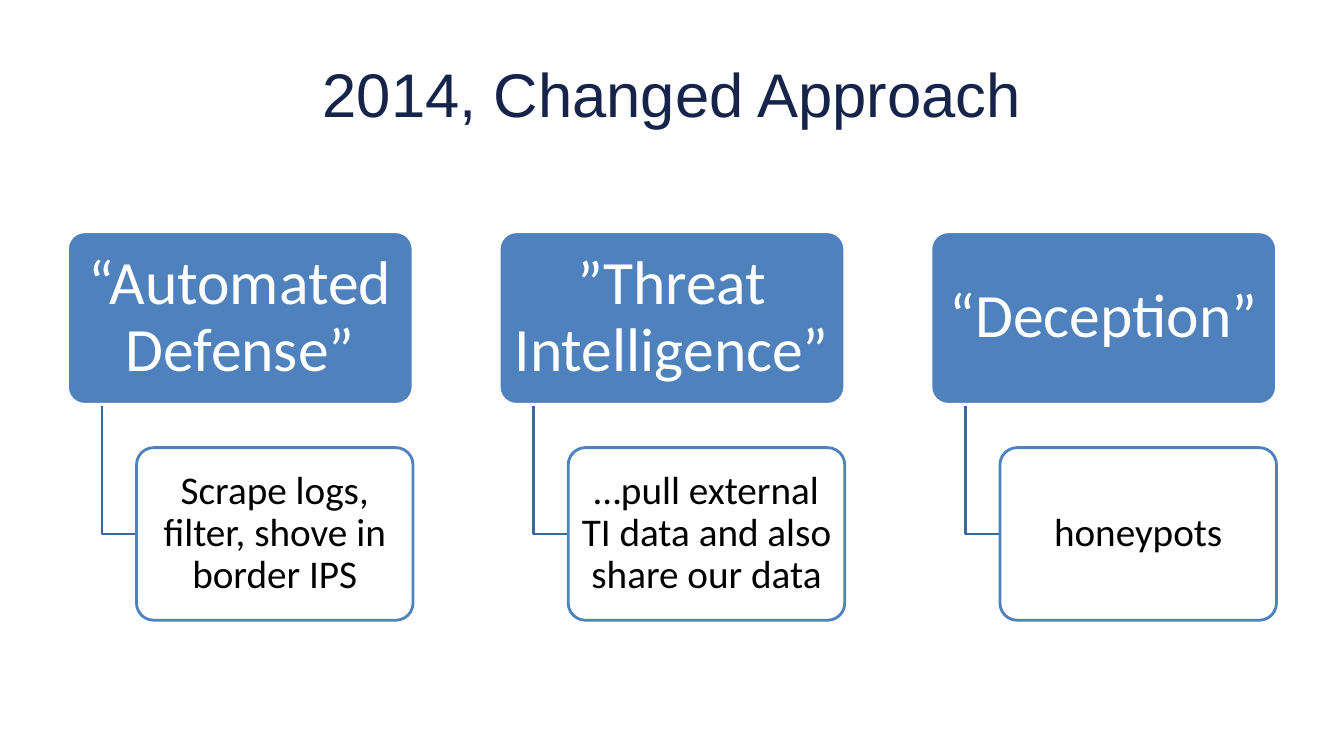
"""Build the slide on the three parts of the approach changed in 2014."""
import pptx
import pptx.dml.color
import pptx.enum.shapes
import pptx.enum.text
import pptx.oxml.ns
import pptx.util
from lxml import etree
from pptx.util import Cm, Pt

COLORS = {
    "title": "16234A",
    "header": "4F81BD",
    "elbow": "3F6797",
    "white": "FFFFFF",
    "black": "000000",
}
APPROACHES = [
    ("“Automated Defense”", "Scrape logs, filter, shove in border IPS"),
    ("”Threat Intelligence”", "…pull external TI data and also share our data"),
    ("“Deception”", "honeypots"),
]
MARGIN, COLUMN_PITCH = 1.7, 10.88
HEADER_TOP, HEADER_WIDTH, BOX_HEIGHT = 5.84, 8.71, 4.35
ELBOW_INDENT, DETAIL_INDENT, ROW_GAP = 0.87, 1.74, 1.09
HEADER_BOTTOM = HEADER_TOP + BOX_HEIGHT
DETAIL_TOP = HEADER_BOTTOM + ROW_GAP
LEVELS = [
    {"indent": 0, "top": HEADER_TOP, "fill": "header", "line": "white", "text": "white",
     "size": 44, "inset": (0.22, 0.15)},
    {"indent": DETAIL_INDENT, "top": DETAIL_TOP, "fill": "white", "line": "header", "text": "black",
     "size": 28, "inset": (0.15, 0.1)},
]


def rgb(role):
    return pptx.dml.color.RGBColor.from_string(COLORS[role])


def write(frame, text, font_format, color):
    frame.vertical_anchor = pptx.enum.text.MSO_ANCHOR.MIDDLE
    paragraph = frame.paragraphs[0]
    paragraph.alignment = pptx.enum.text.PP_ALIGN.CENTER
    run = paragraph.add_run()
    run.text = text
    for attribute, value in font_format.items():
        setattr(run.font, attribute, value)
    run.font.color.rgb = rgb(color)
    return paragraph


deck = pptx.Presentation()
deck.slide_width, deck.slide_height = Cm(33.87), Cm(19.05)
slide = deck.slides.add_slide(deck.slide_layouts[5])

title = slide.shapes.title
title_place = {"left": Cm(MARGIN), "top": Cm(0.76), "width": Cm(30.48), "height": Cm(3.18)}
for attribute, value in title_place.items():
    setattr(title, attribute, value)
write(title.text_frame, "2014, Changed Approach", {"name": "Arial", "size": Pt(44)}, "title")

for column, approach in enumerate(APPROACHES):
    left = MARGIN + column * COLUMN_PITCH

    elbow_left = left + ELBOW_INDENT
    detail_left = left + DETAIL_INDENT
    detail_middle = DETAIL_TOP + BOX_HEIGHT / 2
    outline = slide.shapes.build_freeform(Cm(elbow_left), Cm(HEADER_BOTTOM))
    outline.add_line_segments(
        [(Cm(elbow_left), Cm(detail_middle)), (Cm(detail_left), Cm(detail_middle))], close=False)
    elbow = outline.convert_to_shape()
    elbow.shadow.inherit = False
    elbow.fill.background()
    elbow.line.color.rgb = rgb("elbow")
    elbow.line.width = Pt(2)

    for text, level in zip(approach, LEVELS):
        box = slide.shapes.add_shape(
            pptx.enum.shapes.MSO_SHAPE.ROUNDED_RECTANGLE,
            Cm(left + level["indent"]), Cm(level["top"]),
            Cm(HEADER_WIDTH - level["indent"]), Cm(BOX_HEIGHT))
        box.adjustments[0] = 0.1
        box.shadow.inherit = False
        box.fill.solid()
        box.fill.fore_color.rgb = rgb(level["fill"])
        box.line.color.rgb = rgb(level["line"])
        box.line.width = Pt(2)
        if level["fill"] == "white":
            fill_color = box.fill._xPr.find(".//" + pptx.oxml.ns.qn("a:srgbClr"))
            etree.SubElement(fill_color, pptx.oxml.ns.qn("a:alpha"), val="90000")

        side, edge = (Cm(length) for length in level["inset"])
        frame_format = {"word_wrap": True, "margin_left": side, "margin_right": side,
                        "margin_top": edge, "margin_bottom": edge}
        for attribute, value in frame_format.items():
            setattr(box.text_frame, attribute, value)
        paragraph = write(box.text_frame, text,
                          {"name": "Calibri", "size": Pt(level["size"])}, level["text"])
        paragraph.line_spacing = 0.9

deck.save("out.pptx")
